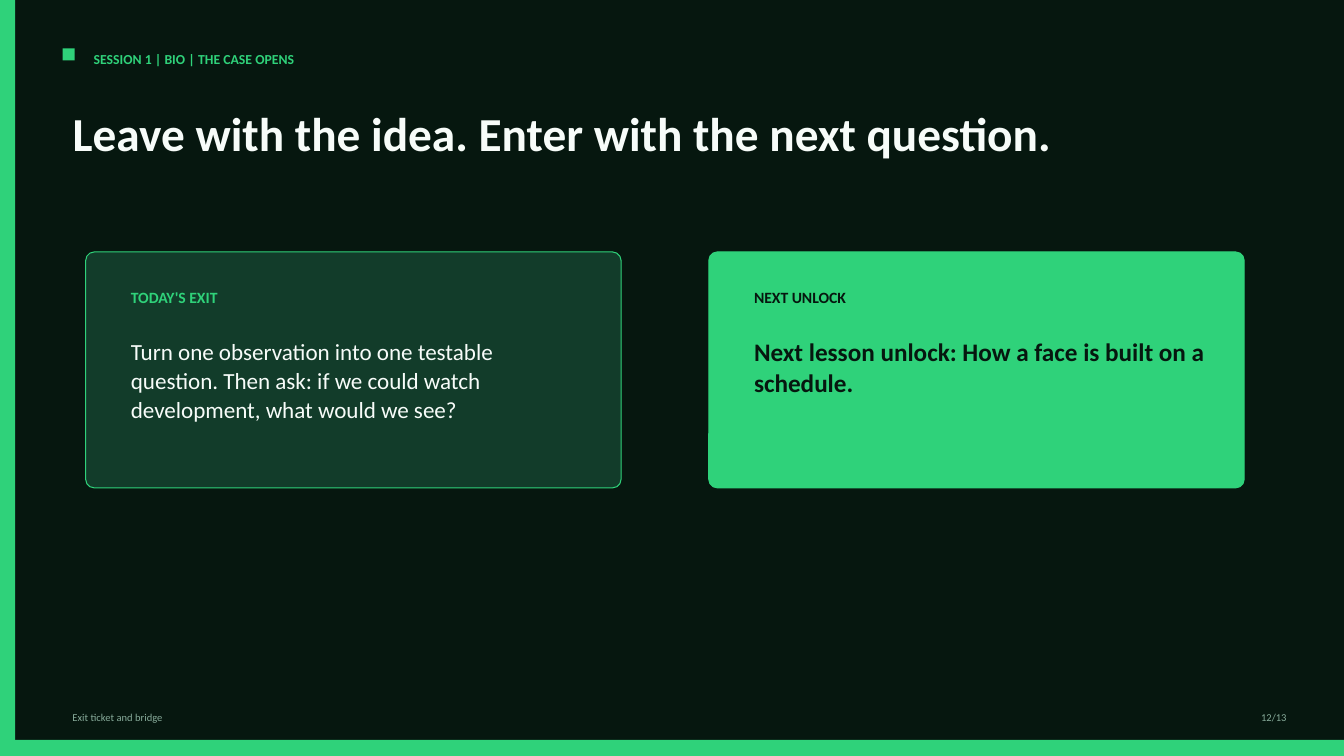
from pptx import Presentation
from pptx.dml.color import RGBColor
from pptx.enum.shapes import MSO_SHAPE as Shape
from pptx.enum.text import MSO_ANCHOR as Anchor, MSO_AUTO_SIZE as Fit, PP_ALIGN as Align
from pptx.util import Inches, Pt

WIDE, HIGH = 13.33, 7.5
EDGE = 0.62
NIGHT = RGBColor(0x06, 0x17, 0x0F)
GREEN = RGBColor(0x2F, 0xD2, 0x7A)
PINE = RGBColor(0x12, 0x3C, 0x2A)
WHITE = RGBColor(0xF7, 0xFC, 0xF9)
SAGE = RGBColor(0x87, 0xAB, 0x9A)

LABEL = {"size": Pt(11.2), "bold": True}
CARDS = [
    {"label": "TODAY'S EXIT", "fill": PINE, "tint": GREEN, "space": 1.06,
     "text": "Turn one observation into one testable question. "
             "Then ask: if we could watch development, what would we see?",
     "ink": WHITE, "look": {"size": Pt(16.5), "bold": False}},
    {"label": "NEXT UNLOCK", "fill": GREEN, "tint": NIGHT, "space": 1.02,
     "text": "Next lesson unlock: How a face is built on a schedule.",
     "ink": NIGHT, "look": {"size": Pt(18), "bold": True}},
]


def style(shape, text, color, look, align=Align.LEFT, space=None):
    frame = shape.text_frame
    for name, value in {"word_wrap": True, "auto_size": Fit.NONE,
                        "vertical_anchor": Anchor.TOP}.items():
        setattr(frame, name, value)
    frame.text = text
    para = frame.paragraphs[0]
    para.alignment = align
    if space:
        para.line_spacing = space
    font = para.runs[0].font
    for name, value in {"name": "Calibri", **look}.items():
        setattr(font, name, value)
    font.color.rgb = color


def write(slide, box, *args, **kwargs):
    """Add a text box and style its text."""
    style(slide.shapes.add_textbox(*map(Inches, box)), *args, **kwargs)


def block(slide, box, fill, kind=Shape.RECTANGLE):
    shape = slide.shapes.add_shape(kind, *map(Inches, box))
    shape.shadow.inherit = False
    shape.fill.solid()
    shape.fill.fore_color.rgb = fill
    shape.line.fill.background()
    return shape


def frame_page(slide):
    """Set the background and the green bars on the left and bottom."""
    slide.background.fill.solid()
    slide.background.fill.fore_color.rgb = NIGHT
    block(slide, (0, 0, 0.15, HIGH), GREEN)
    block(slide, (0, HIGH - 0.16, WIDE, 0.16), GREEN)


def header(slide, left, top, tag, title):
    block(slide, (left, top + 0.03, 0.12, 0.12), GREEN)
    write(slide, (left + 0.21, top, 6.46, 0.25), tag, GREEN,
          {"size": Pt(9.8), "bold": True})
    head = slide.shapes.title
    box = (left, top + 0.59, 11.46, 0.88)
    for name, value in zip(("left", "top", "width", "height"), box):
        setattr(head, name, Inches(value))
    style(head, title, WHITE, {"size": Pt(33.8), "bold": True}, space=0.92)


def footer(slide, left, top, note, page):
    look = {"size": Pt(7.5)}
    write(slide, (left, top, 9.38, 0.19), note, SAGE, look)
    write(slide, (12.03, top, 0.83, 0.19), page, SAGE, look, Align.RIGHT)


def card(slide, box, data):
    left, top, wide, high = box
    panel = block(slide, box, data["fill"], Shape.ROUNDED_RECTANGLE)
    panel.adjustments[0] = 0.036
    panel.line.color.rgb = GREEN
    panel.line.width = Pt(0.75)
    inner = left + 0.35
    write(slide, (inner, top + 0.31, 2.29, 0.26), data["label"], data["tint"], LABEL)
    write(slide, (inner, top + 0.78, wide - 0.62, high / 2), data["text"],
          data["ink"], data["look"], space=data["space"])


def cards(slide, box, gap):
    """Share the box out in equal columns, one for each card."""
    left, top, wide, high = box
    col = (wide - gap * (len(CARDS) - 1)) / len(CARDS)
    for i, data in enumerate(CARDS):
        card(slide, (left + i * (col + gap), top, col, high), data)


def main():
    deck = Presentation()
    deck.slide_width, deck.slide_height = Inches(WIDE), Inches(HIGH)
    slide = deck.slides.add_slide(deck.slide_layouts[5])
    frame_page(slide)
    header(slide, EDGE, 0.45, "SESSION 1 | BIO | THE CASE OPENS",
           "Leave with the idea. Enter with the next question.")
    cards(slide, (0.85, 2.5, 11.49, 2.34), 0.87)
    footer(slide, EDGE, 7, "Exit ticket and bridge", "12/13")
    deck.save("out.pptx")


if __name__ == "__main__":
    main()
